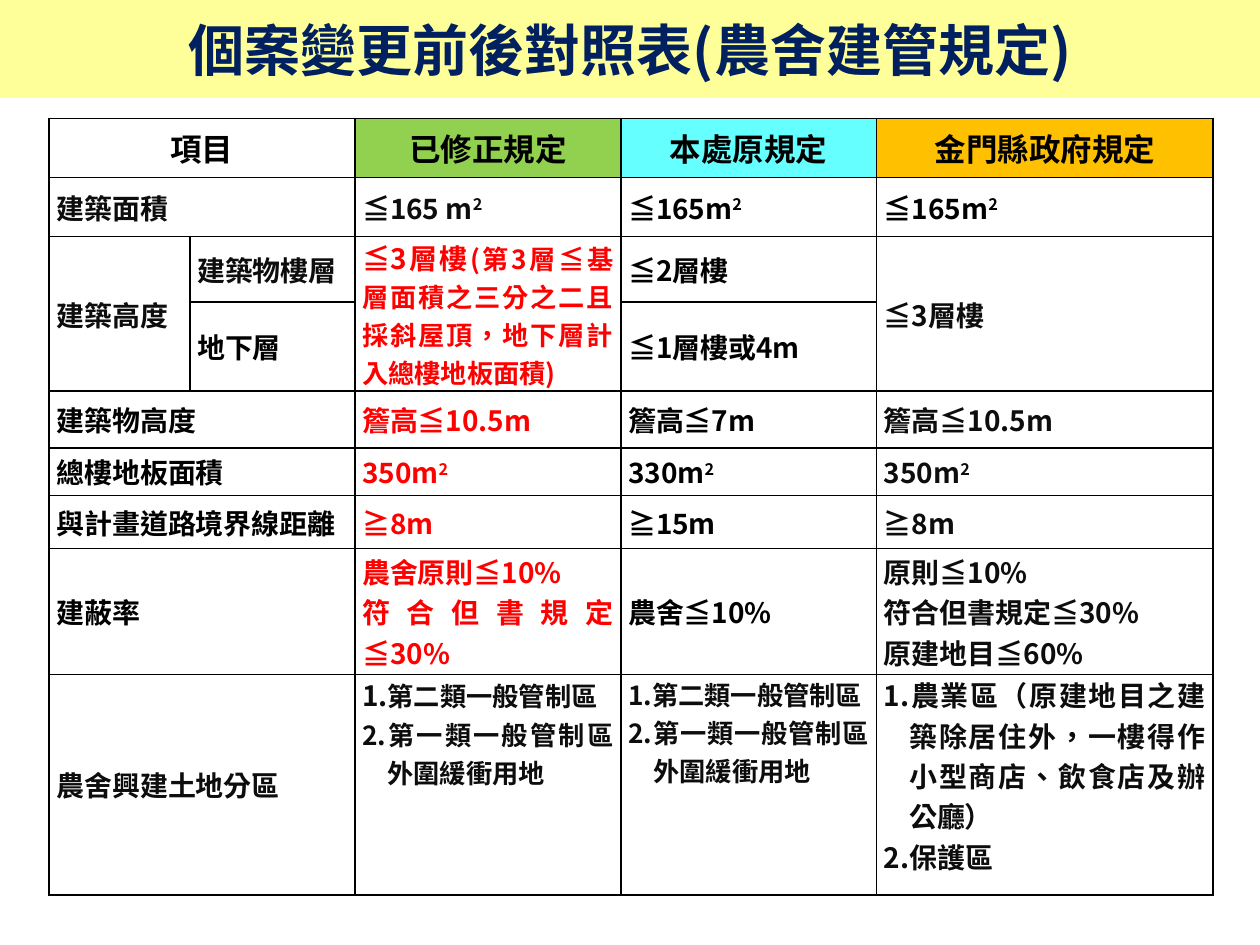
import pptx
import pptx.util
import pptx.dml.color
import pptx.enum.shapes
import pptx.enum.text
import pptx.oxml
import pptx.oxml.ns

Pt = pptx.util.Pt
align = pptx.enum.text.PP_ALIGN
anchor = pptx.enum.text.MSO_ANCHOR
face = "Noto Sans CJK SC"
black, dark, red = "000000", "0D0D0D", "FF0000"


def color(hue):
    return pptx.dml.color.RGBColor.from_string(hue)


def write(para, text, size, hue, base=0):
    run = para.add_run()
    run.text = text
    font = run.font
    font.name, font.size, font.bold = face, Pt(size), True
    font.color.rgb = color(hue)
    props = font._element
    props.set("lang", "zh-TW")
    if base:
        props.set("baseline", str(base * 1000))
    east = pptx.oxml.parse_xml(
        f'<a:ea {pptx.oxml.ns.nsdecls("a")} typeface="{face}"/>')
    props.find(pptx.oxml.ns.qn("a:latin")).addnext(east)


deck = pptx.Presentation()
deck.slide_width, deck.slide_height = Pt(720), Pt(540)
slide = deck.slides.add_slide(deck.slide_layouts[6])

title = slide.shapes.add_shape(
    pptx.enum.shapes.MSO_SHAPE.RECTANGLE, 0, 0, Pt(720), Pt(56))
title.shadow.inherit = False
title.fill.solid()
title.fill.fore_color.rgb = color("FFFF99")
title.line.fill.background()
title.text_frame.vertical_anchor = anchor.MIDDLE
para = title.text_frame.paragraphs[0]
para.alignment = align.CENTER
write(para, "個案變更前後對照表(農舍建管規定)", 32, "002060")

widths = [80.4, 94.3, 152, 146.2, 192.2]
heights = [33.8, 33.8, 37.4, 45.4, 32.4, 27.4, 30.2, 72, 126]
table = slide.shapes.add_table(
    len(heights), len(widths), Pt(28.1), Pt(67.7),
    Pt(sum(widths)), Pt(sum(heights))).table
for col, width in zip(table.columns, widths):
    col.width = Pt(width)
for row, height in zip(table.rows, heights):
    row.height = Pt(height)

for row in (0, 1, 4, 5, 6, 7, 8):
    table.cell(row, 0).merge(table.cell(row, 1))
for col in (0, 2, 4):
    table.cell(2, col).merge(table.cell(3, col))

fills = {0: "FFFFFF", 2: "92D050", 3: "66FFFF", 4: "FFC000"}
for row in range(len(heights)):
    for col in range(len(widths)):
        cell = table.cell(row, col)
        cell.margin_left = cell.margin_right = Pt(4.2)
        cell.margin_top = cell.margin_bottom = 0
        cell.vertical_anchor = (
            anchor.TOP if row == 8 and col > 1 else anchor.MIDDLE)
        if row == 0 and col in fills:
            cell.fill.solid()
            cell.fill.fore_color.rgb = color(fills[col])
        else:
            cell.fill.background()
        props = cell._tc.get_or_add_tcPr()
        for spot, side in enumerate(("lnL", "lnR", "lnT", "lnB")):
            props.insert(spot, pptx.oxml.parse_xml(
                f'<a:{side} {pptx.oxml.ns.nsdecls("a")} w="12700"><a:solidFill>'
                f'<a:srgbClr val="{black}"/></a:solidFill></a:{side}>'))

heads = ["項目", None, "已修正規定", "本處原規定", "金門縣政府規定"]
for col, text in enumerate(heads):
    if text:
        para = table.cell(0, col).text_frame.paragraphs[0]
        para.alignment = align.CENTER
        write(para, text, 18, black)

labels = [
    (1, 0, "建築面積", dark), (2, 0, "建築高度", dark),
    (2, 1, "建築物樓層", dark), (3, 1, "地下層", black),
    (4, 0, "建築物高度", black), (5, 0, "總樓地板面積", black),
    (6, 0, "與計畫道路境界線距離", black), (7, 0, "建蔽率", black),
    (8, 0, "農舍興建土地分區", dark),
]
for row, col, text, hue in labels:
    para = table.cell(row, col).text_frame.paragraphs[0]
    para.alignment = align.LEFT
    write(para, text, 16, hue)

square = ("2", 16, 30)
buffer = [("2.第一類一般管制區外圍緩衝用地", 15)]
rules = [
    (1, 2, dark, [[("≦165 m", 16), square]]),
    (1, 3, black, [[("≦165m", 16), square]]),
    (1, 4, black, [[("≦165m", 16), square]]),
    (2, 2, red, [[("≦3層樓", 16),
                  ("(第3層≦基層面積之三分之二且採斜屋頂，地下層計入總樓地板面積)", 15)]]),
    (2, 3, black, [[("≦2層樓", 16)]]),
    (2, 4, dark, [[("≦3層樓", 16)]]),
    (3, 3, black, [[("≦1層樓或4m", 16)]]),
    (4, 2, red, [[("簷高≦10.5m", 16)]]),
    (4, 3, black, [[("簷高≦7m", 16)]]),
    (4, 4, dark, [[("簷高≦10.5m", 16)]]),
    (5, 2, red, [[("350m", 16), square]]),
    (5, 3, black, [[("330m", 16), square]]),
    (5, 4, dark, [[("350m", 16), square]]),
    (6, 2, red, [[("≧8m", 16)]]),
    (6, 3, black, [[("≧15m", 16)]]),
    (6, 4, dark, [[("≧8m", 16)]]),
    (7, 2, red, [[("農舍原則≦10%", 16)], [("符合但書規定≦30%", 16)]]),
    (7, 3, black, [[("農舍≦10%", 16)]]),
    (7, 4, dark, [[("原則≦10%", 16)], [("符合但書規定≦30%", 16)],
                  [("原建地目≦60%", 16)]]),
    (8, 2, dark, [[("1.", 16), ("第二類一般管制區", 15)], buffer]),
    (8, 3, dark, [[("1.第二類一般管制區", 15)], buffer]),
    (8, 4, dark, [[("1.農業區（原建地目之建築除居住外，一樓得作小型商店、飲食店及辦公廳）", 16)],
                  [("2.保護區", 16)]]),
]
for row, col, hue, lines in rules:
    frame = table.cell(row, col).text_frame
    for spot, runs in enumerate(lines):
        para = frame.add_paragraph() if spot else frame.paragraphs[0]
        para.alignment = align.JUSTIFY
        if row == 8 and (spot or col == 4):
            props = para._p.get_or_add_pPr()
            props.set("marL", str(Pt(14.4)))
            props.set("indent", str(-Pt(14.4)))
        for run in runs:
            write(para, run[0], run[1], hue, *run[2:])

deck.save("out.pptx")
